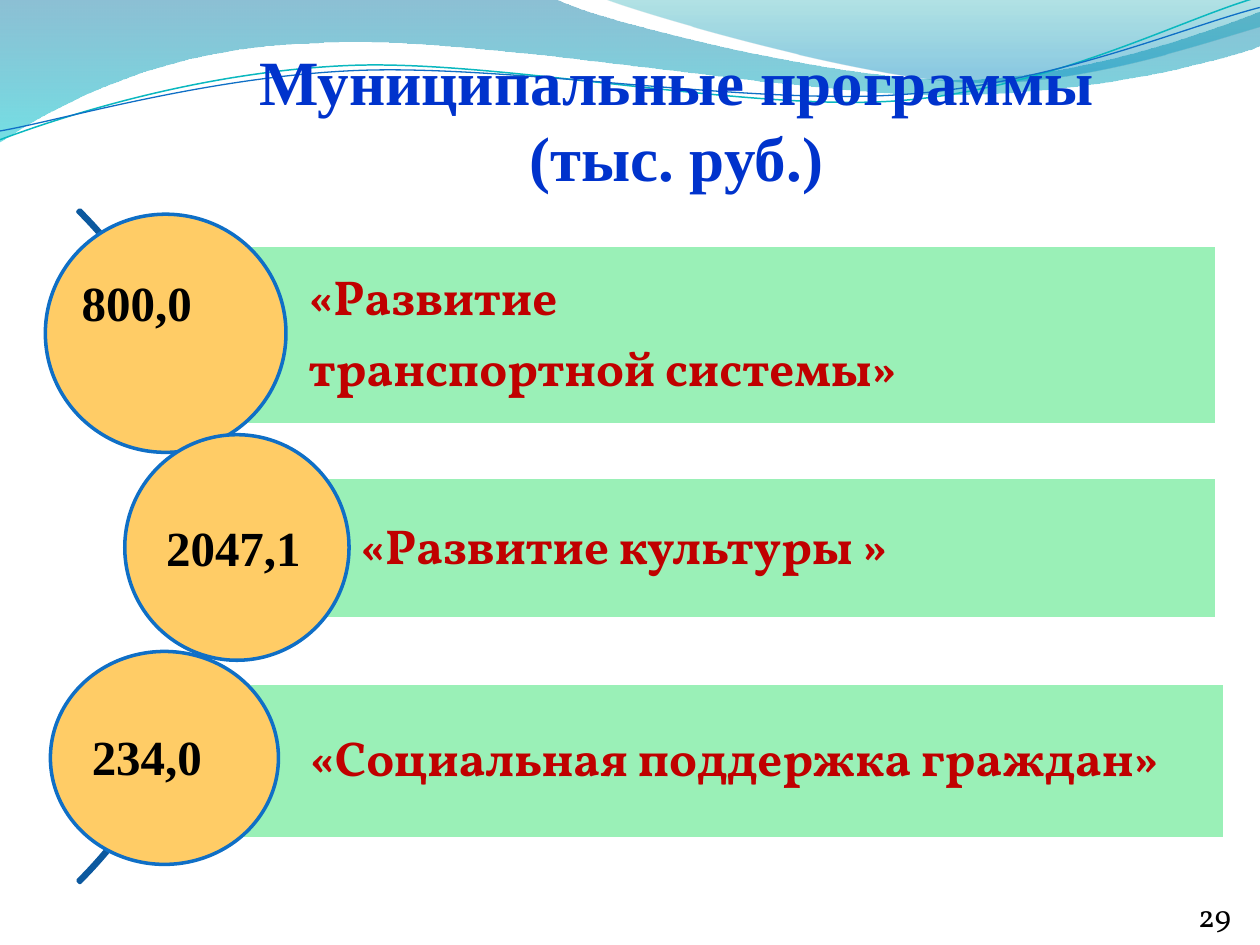
from math import cos, radians, sin

from lxml.etree import SubElement
from pptx import Presentation
from pptx.dml.color import RGBColor
from pptx.enum.shapes import MSO_SHAPE
from pptx.enum.text import MSO_ANCHOR, MSO_AUTO_SIZE, PP_ALIGN
from pptx.oxml.ns import qn
from pptx.util import Inches, Pt

COLORS = {
    "title": "0033CC", "program": "C00000", "black": "000000",
    "band": "9AF0B7", "white": "FFFFFF", "circle": "FFCC66",
    "outline": "0F6FC6", "arc": "0C599F", "teal_line": "0AB8BF",
    "deep_blue": "0074A1", "cyan": "00C6CF",
    "teal": "00A1A9", "blue": "008BBF",
}
SERIF = "Times New Roman"
BODY = "Vollkorn"
STRAND_TILT = 2.7

LARGE_WAVE = [
    (0, 0), (4.4, -0.01),
    (4.76, 0.17, 6.64, 0.63, 7.58, 0.63), (8.53, 0.63, 9.58, 0.26, 10, 0.09),
    (10.01, 0.36),
    (9.83, 0.44, 8.7, 0.76, 7.46, 0.75), (6.22, 0.75, 3.82, 0.28, 2.57, 0.34),
    (1.29, 0.36, 0.46, 0.83, -0.01, 1.13), (0, 0),
]
SMALL_WAVE = [
    (4.79, -0.01),
    (5.09, 0.11, 6.82, 0.62, 7.69, 0.65), (8.56, 0.69, 9.61, 0.32, 10, 0.21),
    (10, 0), (4.79, -0.01),
]
TEAL_STRAND = [
    (0, 1.11),
    (0.48, 0.93, 1.58, 0.57, 2.77, 0.52), (3.95, 0.47, 5.93, 0.89, 7.13, 0.8),
    (8.33, 0.71, 9.38, 0.15, 9.98, -0.02),
]
BLUE_STRAND = [
    (0, 1.04),
    (0.47, 0.96, 1.64, 0.61, 2.83, 0.56), (4.03, 0.51, 5.97, 0.84, 7.17, 0.75),
    (8.36, 0.67, 9.41, 0.21, 10, 0.06),
]
PROGRAMS = [
    ((1.56, 1.95, 8.1, 1.42), (0.36, 1.7, 1.91, 1.89),
     ["«Развитие", "транспортной системы»"]),
    ((1.97, 3.79, 7.69, 1.12), (0.99, 3.45, 1.78, 1.79),
     ["«Развитие культуры »"]),
    ((1.57, 5.42, 8.15, 1.24), (0.4, 5.17, 1.81, 1.69),
     ["«Социальная поддержка граждан»"]),
]
AMOUNTS = [
    ((1.22, 4.06, 1.42, 0.57), "2047,1"),
    ((0.63, 5.72, 1.42, 0.57), "234,0"),
    ((0.55, 2.11, 1.62, 0.57), "800,0"),
]


def color(name):
    return RGBColor.from_string(COLORS[name])


def turn(points, degrees):
    center_x = (points[0][0] + points[-1][0]) / 2
    center_y = (points[0][1] + points[-1][1]) / 2
    cosine, sine = cos(radians(degrees)), sin(radians(degrees))
    return [(center_x + (x - center_x) * cosine - (y - center_y) * sine,
             center_y + (x - center_x) * sine + (y - center_y) * cosine)
            for x, y in points]


def add_curve(slide, segments, box, close, tilt=0):
    left, top = box
    points = [pair for segment in segments
              for pair in zip(segment[::2], segment[1::2])]
    points = [(Inches(left + x), Inches(top + y)) for x, y in turn(points, tilt)]
    builder = slide.shapes.build_freeform(*points[0])
    builder.add_line_segments(points[1:], close=close)
    shape = builder.convert_to_shape()
    shape.shadow.inherit = False
    shape.rotation = -tilt
    lines = iter(list(shape.element.iter(qn("a:lnTo"))))
    for segment in segments[1:]:
        line = next(lines)
        if len(segment) == 6:
            line.tag_name = None
            curve = line.makeelement(qn("a:cubicBezTo"))
            line.addprevious(curve)
            for corner in (line, next(lines), next(lines)):
                curve.append(corner[0])
                corner.getparent().remove(corner)
    return shape


def add_wave(slide, segments, stops, box):
    shape = add_curve(slide, segments, box, True)
    shape.line.fill.background()
    shape.fill.gradient()
    shape.fill.gradient_angle = 270
    for stop, (position, name, _) in zip(shape.fill.gradient_stops, stops):
        stop.position = position
        stop.color.rgb = color(name)
    for element, (_, _, opacity) in zip(shape.element.iter(qn("a:srgbClr")), stops):
        SubElement(element, qn("a:alpha"), val=str(opacity * 1000))


def add_strand(slide, segments, name, width, box):
    shape = add_curve(slide, segments, box, False, STRAND_TILT)
    shape.fill.background()
    shape.line.color.rgb = color(name)
    shape.line.width = Pt(width)


def add_header_waves(slide, box):
    add_wave(slide, LARGE_WAVE, [(0, "deep_blue", 45), (1, "cyan", 55)], box)
    add_wave(slide, SMALL_WAVE, [(0, "teal", 30), (0.8, "blue", 45)], box)
    add_strand(slide, TEAL_STRAND, "teal_line", 0.85, box)
    add_strand(slide, BLUE_STRAND, "outline", 0.75, box)


def add_label(slide, box, lines, font, size, name, bold=True, wrap=True,
              alignment=PP_ALIGN.LEFT):
    frame = slide.shapes.add_textbox(*map(Inches, box)).text_frame
    frame.word_wrap = wrap
    frame.auto_size = MSO_AUTO_SIZE.SHAPE_TO_FIT_TEXT
    for index, line in enumerate(lines):
        paragraph = frame.add_paragraph() if index else frame.paragraphs[0]
        paragraph.alignment = alignment
        run = paragraph.add_run()
        run.text = line
        run.font.name = font
        run.font.size = Pt(size)
        run.font.bold = bold
        run.font.color.rgb = color(name)
    return frame


def add_outlined_shape(slide, kind, box, fill, line):
    shape = slide.shapes.add_shape(kind, *map(Inches, box))
    shape.shadow.inherit = False
    if fill:
        shape.fill.solid()
        shape.fill.fore_color.rgb = color(fill)
    else:
        shape.fill.background()
    shape.line.color.rgb = color(line)
    shape.line.width = Pt(2)
    return shape


def add_arc(slide, box):
    arc = add_outlined_shape(slide, MSO_SHAPE.BLOCK_ARC, box, None, "arc")
    for index, value in enumerate((189, 27, 0.003)):
        arc.adjustments[index] = value


def add_program(slide, band_box, circle_box, lines):
    add_outlined_shape(slide, MSO_SHAPE.RECTANGLE, band_box, "band", "white")
    frame = add_label(slide, band_box, lines, BODY, 28, "program")
    frame.auto_size = MSO_AUTO_SIZE.NONE
    frame.vertical_anchor = MSO_ANCHOR.MIDDLE
    frame.margin_left = Inches(0.89)
    frame.margin_top = frame.margin_right = frame.margin_bottom = Inches(0.08)
    for paragraph in frame.paragraphs:
        paragraph.line_spacing = 0.9
        paragraph.space_after = Pt(10)
    add_outlined_shape(slide, MSO_SHAPE.OVAL, circle_box, "circle", "outline")


def main():
    presentation = Presentation()
    presentation.slide_width = Inches(10)
    presentation.slide_height = Inches(7.5)
    slide = presentation.slides.add_slide(presentation.slide_layouts[6])
    add_header_waves(slide, (0, 0))
    add_label(slide, (1.92, 0.29, 7.02, 1.31),
              ["Муниципальные программы ", "(тыс. руб.) "],
              SERIF, 36, "title", wrap=False, alignment=PP_ALIGN.CENTER)
    add_arc(slide, (-5.81, 0.56, 7.55, 7.55))
    for program in PROGRAMS:
        add_program(slide, *program)
    for box, amount in AMOUNTS:
        add_label(slide, box, [amount], SERIF, 28, "black")
    add_label(slide, (9.41, 7.06, 0.51, 0.4), ["29"], BODY, 18, "black", bold=False)
    presentation.save("out.pptx")


if __name__ == "__main__":
    main()
